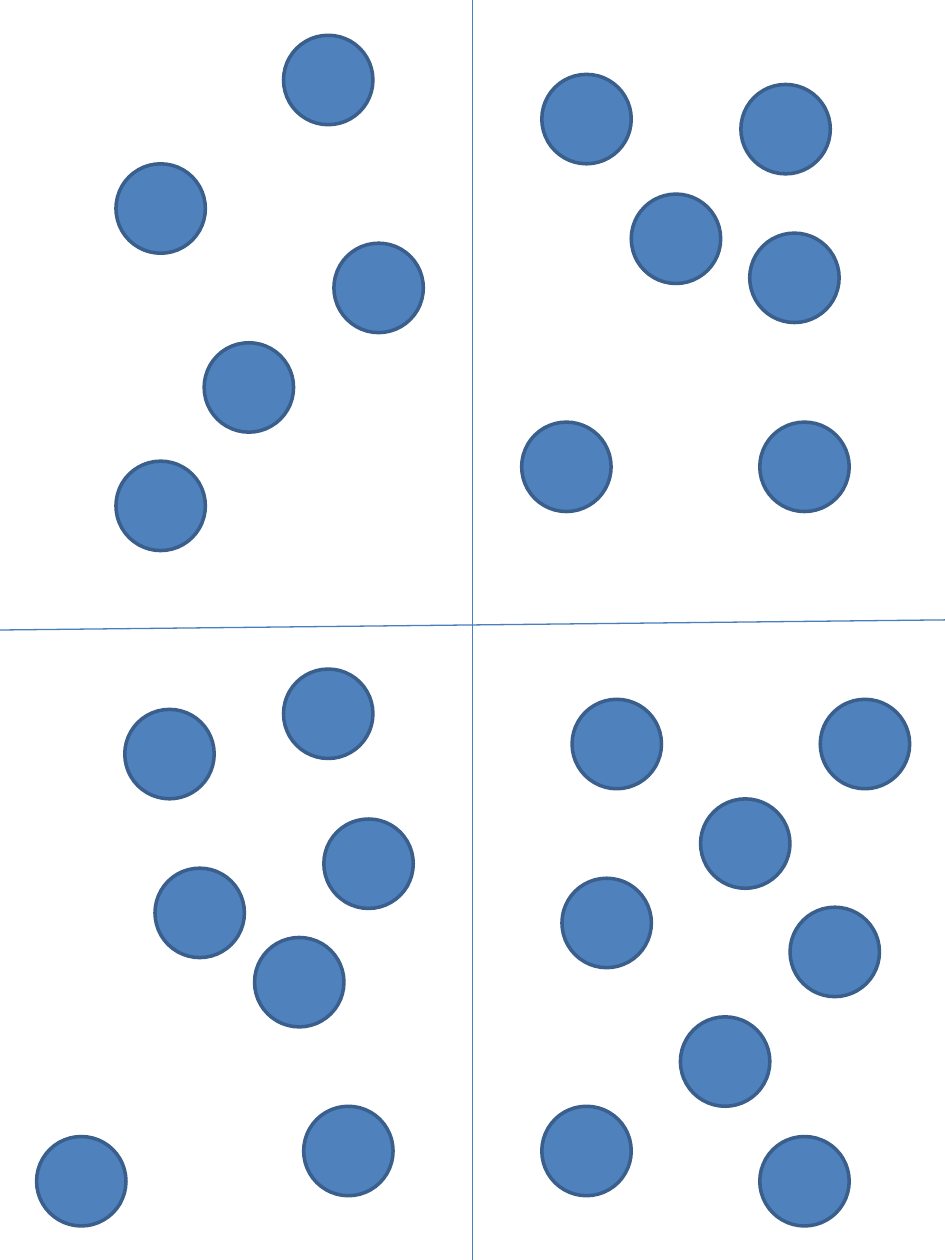
import pptx
import pptx.dml.color
import pptx.enum.shapes
import pptx.oxml
import pptx.util

Inches = pptx.util.Inches
Pt = pptx.util.Pt

COLORS = {"dot": "4F81BD", "rim": "3A5F8C", "rule": "4B7EBC", "page": "FFFFFF"}
WIDE, HIGH, SIZE = 7.5, 10, 0.71
CARDS = {
    (0, 0): [(0.92, 3.66), (1.62, 2.72), (2.65, 1.93), (0.92, 1.3), (2.25, 0.28)],
    (1, 0): [(0.39, 3.35), (1.26, 1.54), (2.28, 3.35), (0.55, 0.59), (2.2, 1.85),
             (2.13, 0.67)],
    (0, 1): [(1.23, 1.89), (2.25, 0.31), (0.99, 0.63), (2.41, 3.78), (0.29, 4.02),
             (2.57, 1.5), (2.02, 2.44)],
    (1, 1): [(1.81, 1.34), (2.52, 2.2), (0.71, 1.97), (1.65, 3.07), (2.28, 4.02),
             (0.55, 3.78), (2.76, 0.55), (0.79, 0.55)],
}
RULES = [(WIDE / 2, 0, WIDE / 2, HIGH), (0, HIGH / 2, WIDE, 4.92)]


def color(name):
    """Return the named colour."""
    return pptx.dml.color.RGBColor.from_string(COLORS[name])


def style(part, values):
    """Set each attribute of a part from a dict."""
    for name, value in values.items():
        setattr(part, name, value)


def paint(fill, name):
    """Make a fill solid in the named colour."""
    fill.solid()
    style(fill.fore_color, {"rgb": color(name)})


def rule(slide, ends):
    """Draw one dividing line between two points."""
    kind = pptx.enum.shapes.MSO_CONNECTOR.STRAIGHT
    line = slide.shapes.add_connector(kind, *[Inches(end) for end in ends])
    paint(line.line.fill, "rule")
    style(line.line, {"width": Pt(0.75)})
    props = line._element.spPr
    props.append(pptx.oxml.parse_xml(
        '<a:effectLst xmlns:a="http://schemas.openxmlformats.org/drawingml/2006/main"/>'))


def card(slide, left, top, dots):
    """Place the dots of one card from its top left corner."""
    kind = pptx.enum.shapes.MSO_SHAPE.OVAL
    for x, y in dots:
        dot = slide.shapes.add_shape(
            kind, Inches(left + x), Inches(top + y), Inches(SIZE), Inches(SIZE))
        paint(dot.fill, "dot")
        paint(dot.line.fill, "rim")
        style(dot.line, {"width": Pt(2)})
        style(dot.shadow, {"inherit": False})


def main():
    """Build the sheet of four dot cards."""
    deck = pptx.Presentation()
    style(deck, {"slide_width": Inches(WIDE), "slide_height": Inches(HIGH)})
    slide = deck.slides.add_slide(deck.slide_layouts[6])
    paint(slide.background.fill, "page")
    for ends in RULES:
        rule(slide, ends)
    for (col, row), dots in CARDS.items():
        card(slide, col * WIDE / 2, row * HIGH / 2, dots)
    deck.save("out.pptx")


if __name__ == "__main__":
    main()
